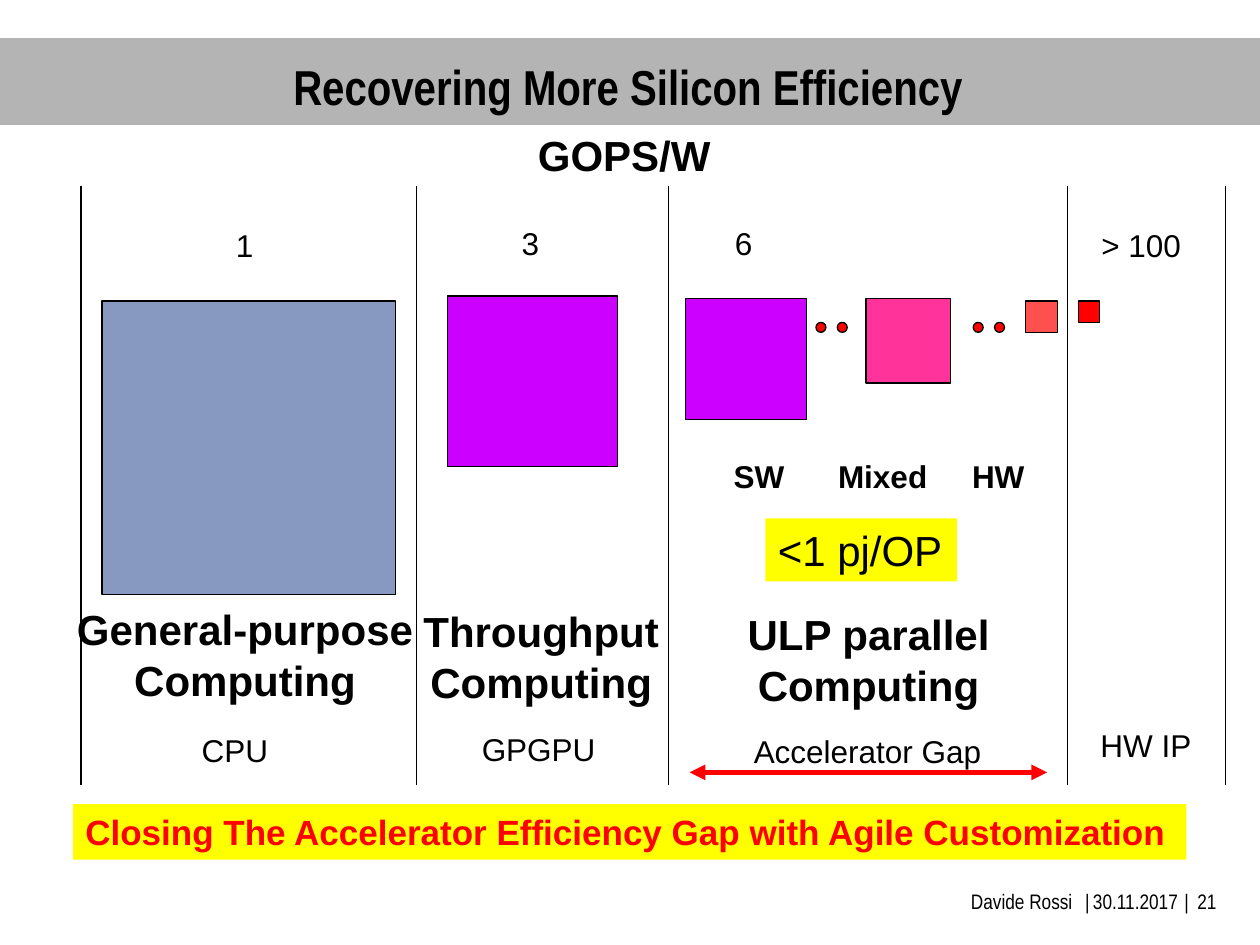
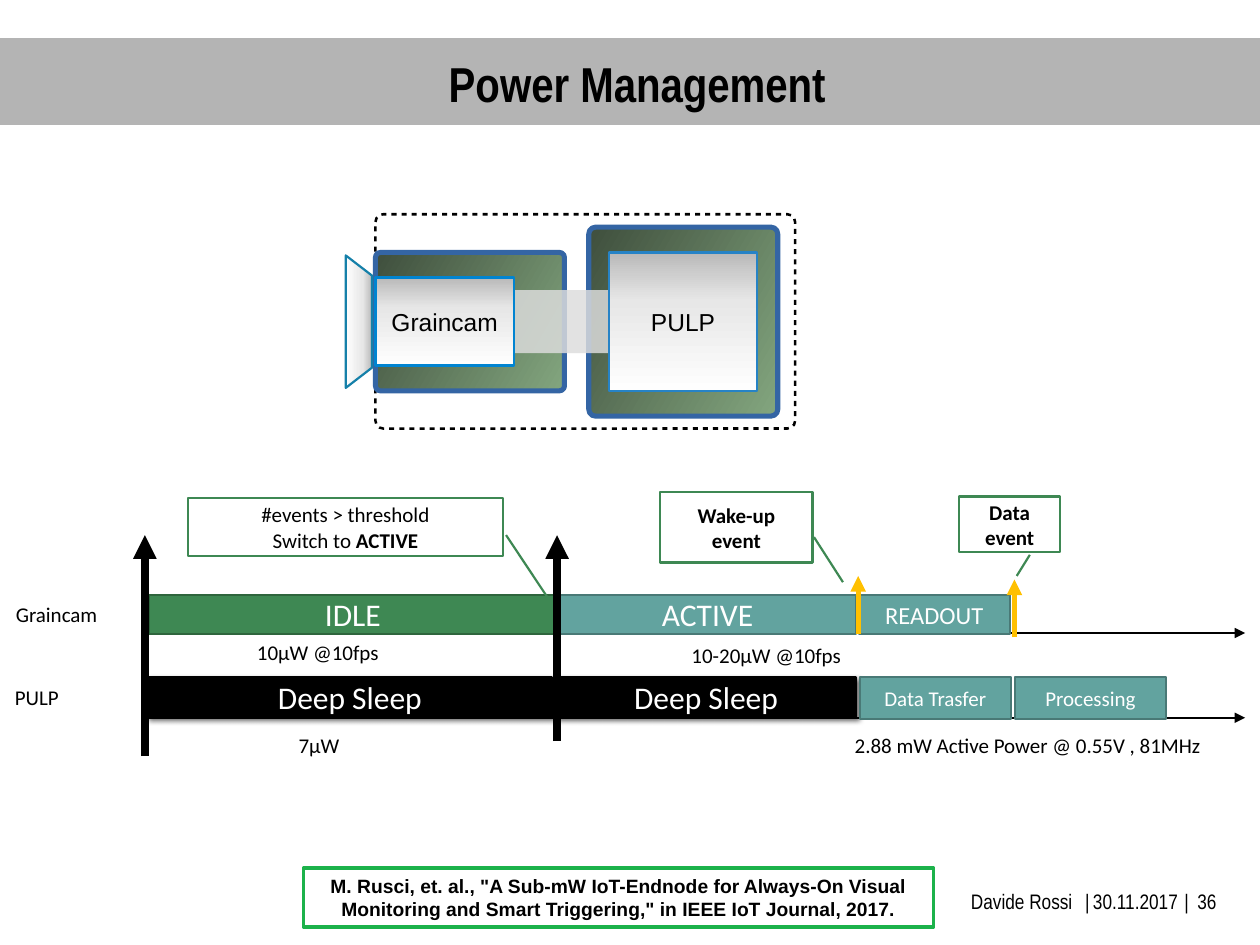
"""Build two slides on silicon efficiency and power management."""
from lxml.etree import SubElement
from pptx import Presentation
from pptx.dml.color import RGBColor
from pptx.enum.shapes import MSO_CONNECTOR, MSO_SHAPE
from pptx.enum.text import MSO_ANCHOR, PP_ALIGN
from pptx.oxml import parse_xml
from pptx.oxml.ns import nsdecls, qn
from pptx.util import Cm, Pt

BLACK, WHITE, RED, YELLOW = "000000", "FFFFFF", "FF0000", "FFFF00"
BAND, GREEN, TEAL, AMBER = "B4B4B4", "3E8853", "62A39F", "FFC000"
METAL = ([(0, "FEFEFE"), (65, "E7E7E7"), (100, "B9B9B9")], 270)
BOARD = ([(0, "3F4F3D"), (100, "83A67F")], 30)
LEFT, CENTER, RIGHT = PP_ALIGN.LEFT, PP_ALIGN.CENTER, PP_ALIGN.RIGHT
NARROW, SANS, BODY = "Arial Narrow", "Arial", "Calibri"

AUTHOR, DATE = "Davide Rossi", "30.11.2017"
EFFICIENCY = dict(title="Recovering More Silicon Efficiency", number="21",
                  title_spot=(0.87, 0.93, 23.6, 1.4))
POWER = dict(title="Power Management", number="36",
             title_spot=(0.91, 1.19, 23.9, 1.07))

DIVIDERS = (1.63, 8.4, 13.48, 21.52, 24.7)
SQUARES = [
    (2.06, 6.07, 5.92, "8799C1"), (9.02, 5.97, 3.43, "CC00FF"),
    (13.82, 6.02, 2.44, "CC00FF"), (17.46, 6.02, 1.7, "FF3399"),
    (20.68, 6.07, 0.64, "FF5050"), (21.74, 6.07, 0.43, RED),
]
DOT_PAIRS, DOT_STEP, DOT = (16.45, 19.62), 0.43, 0.2
PLAIN_LABELS = [
    (4.5, 4.42, 0.86, "1"), (10.26, 4.39, 0.86, "3"), (14.56, 4.39, 0.86, "6"),
    (21.95, 4.42, 2.11, "> 100"), (3.8, 14.61, 1.87, "CPU"),
    (9.44, 14.58, 2.84, "GPGPU"), (13.26, 14.63, 8.46, "Accelerator Gap"),
    (21.92, 14.5, 2.36, "HW IP"),
]
APPROACHES = [(14.53, 9.08, 1.54, "SW"), (16.63, 9.08, 2.33, "Mixed"),
              (19.33, 9.08, 1.59, "HW")]
HEADINGS = [
    (10.45, 2.49, 4.27, "GOPS/W"),
    (1.27, 12.04, 7.34, "General-purpose\nComputing"),
    (8.25, 12.08, 5.32, "Throughput\nComputing"),
    (14.78, 12.14, 5.46, "ULP parallel\nComputing"),
]
ENERGY = "<1 pj/OP"
MESSAGE = "Closing The Accelerator Efficiency Gap with Agile Customization"

TIME_AXES = (12.76, 14.47)
PHASE_STARTS = [(2.92, 15.24), (11.23, 14.94)]
EVENTS = [(17.3, 12.78, 11.61), (20.45, 12.85, 11.68)]
STATES = [
    ((3, 11.99, 8.23, 0.79), "IDLE", 18, GREEN, "2E653D"),
    ((2.98, 13.66, 8.15, 0.79), "Deep Sleep", 18, BLACK, BLACK),
    ((11.28, 11.99, 5.97, 0.79), "ACTIVE", 18, TEAL, "497976"),
    ((11.21, 13.66, 6.05, 0.79), "Deep Sleep", 18, BLACK, BLACK),
    ((17.31, 11.99, 3.05, 0.79), "READOUT", 14, TEAL, "497976"),
    ((17.33, 13.65, 3.05, 0.84), "Data Trasfer", 12, TEAL, "497976"),
    ((20.46, 13.65, 3.05, 0.84), "Processing", 12, TEAL, "497976"),
]
CALLOUTS = [
    ((3.79, 10.04, 6.35, 1.17), "#events > threshold\nSwitch to *ACTIVE*",
     (0.64, 1.01, 1.7, 1.14)),
    ((13.31, 9.92, 3.07, 1.42), "*Wake-up*\n*event*", (0.64, 1.01, 1.28, 1.2)),
    ((19.34, 10.01, 2.03, 1.12), "*Data*\n*event*", (1.05, 0.7, 1.43, 0.57)),
]
TIMELINE_LABELS = [
    (0.07, 11.99, 3.94, "Graincam"), (0.05, 13.66, 3.94, "PULP"),
    (4.93, 12.77, 4.24, "10μW @10fps"), (5.77, 14.63, 4.24, "7μW"),
    (13.69, 12.83, 4.9, "10-20μW @10fps"),
    (16.98, 14.63, 7.72, "2.88 mW Active Power @ 0.55V , 81MHz"),
]
BOARDS = [(7.57, 5.09, 3.81, 2.79), (11.87, 4.58, 3.81, 3.81)]
CHIPS = [
    ((7.57, 5.59, 2.79, 1.78), "Graincam", "0084D1", 1.45),
    ((12.27, 5.09, 3, 2.79), "PULP", "2683C6", 1.25),
]
CITATION = ('M. Rusci, et. al., "A Sub-mW IoT-Endnode for Always-On Visual '
            'Monitoring and Smart Triggering," in IEEE IoT Journal, 2017.')


def color(value):
    """Turn a hex string into a colour."""
    return RGBColor.from_string(value)


def write(box, text, size=12, font=BODY, ink=BLACK, bold=False, align=CENTER,
          anchor=MSO_ANCHOR.TOP, wrap=True, margins=(0.25, 0.13, 0.25, 0.13)):
    """Write lines of text, where asterisks switch bold on and off."""
    frame = box.text_frame
    frame.word_wrap, frame.vertical_anchor = wrap, anchor
    (frame.margin_left, frame.margin_top,
     frame.margin_right, frame.margin_bottom) = map(Cm, margins)
    for index, line in enumerate(text.split("\n")):
        para = frame.add_paragraph() if index else frame.paragraphs[0]
        para.alignment = align
        for turn, piece in enumerate(line.split("*")):
            if piece:
                span = para.add_run()
                span.text = piece
                span.font.size, span.font.name = Pt(size), font
                span.font.bold = bold or turn % 2 == 1
                span.font.color.rgb = color(ink)


def add_text(page, spot, text, **style):
    """Add a text box."""
    write(page.shapes.add_textbox(*map(Cm, spot)), text, **style)


def add_gradient(shape, stops, angle):
    """Give a shape a linear gradient."""
    shape.fill.background()
    marks = "".join(f'<a:gs pos="{at * 1000}"><a:srgbClr val="{tone}"/></a:gs>'
                    for at, tone in stops)
    gradient = parse_xml(
        f'<a:gradFill {nsdecls("a")} rotWithShape="1"><a:gsLst>{marks}</a:gsLst>'
        f'<a:lin ang="{angle * 60000}" scaled="0"/></a:gradFill>')
    properties = shape.element.spPr
    properties.replace(properties.find(qn("a:noFill")), gradient)


def add_shape(page, spot, fill=None, line=None, weight=0.75,
              kind=MSO_SHAPE.RECTANGLE, adjust=()):
    """Add a preset shape with a plain, gradient or empty fill."""
    shape = page.shapes.add_shape(kind, *map(Cm, spot))
    shape.shadow.inherit = False
    for index, value in enumerate(adjust):
        shape.adjustments[index] = value
    if isinstance(fill, tuple):
        add_gradient(shape, *fill)
    elif fill:
        shape.fill.solid()
        shape.fill.fore_color.rgb = color(fill)
    else:
        shape.fill.background()
    if line:
        shape.line.color.rgb = color(line)
        shape.line.width = Pt(weight)
    else:
        shape.line.fill.background()
    return shape


def add_line(page, start, end, ink=BLACK, weight=0.75, heads=()):
    """Add a straight line with optional arrowheads."""
    line = page.shapes.add_connector(MSO_CONNECTOR.STRAIGHT, *map(Cm, start + end))
    line.line.color.rgb = color(ink)
    line.line.width = Pt(weight)
    for head in heads:
        SubElement(line.element.spPr.find(qn("a:ln")), qn(f"a:{head}"),
                   type="triangle")
    SubElement(line.element.spPr, qn("a:effectLst"))


def add_drop_shadow(shape):
    """Give a shape a soft shadow."""
    shape.element.spPr.find(qn("a:effectLst")).append(parse_xml(
        f'<a:outerShdw {nsdecls("a")} blurRad="38100" dist="25400" dir="2700000">'
        '<a:srgbClr val="000000"><a:alpha val="60000"/></a:srgbClr></a:outerShdw>'))


def add_page(deck, title, title_spot, number):
    """Add a page with its band, title and footer."""
    page = deck.slides.add_slide(deck.slide_layouts[6])
    add_shape(page, (0, 0.77, 25.4, 1.75), BAND)
    add_text(page, title_spot, title, size=28, font=NARROW, bold=True,
             anchor=MSO_ANCHOR.BOTTOM, margins=(0.38, 0, 0.41, 0))
    footer = [(12.7, 8.92, AUTHOR, RIGHT), (21.77, 0.3, "|", CENTER),
              (21.89, 2, DATE, CENTER), (23.77, 0.3, "|", CENTER),
              (23.96, 0.74, number, CENTER)]
    for left, width, text, align in footer:
        add_text(page, (left, 17.52, width, 1.3), text, font=NARROW, align=align,
                 anchor=MSO_ANCHOR.MIDDLE, wrap=False, margins=(0, 0, 0, 0))
    return page


def build_efficiency(deck):
    """Compare the efficiency of the computing classes."""
    page = add_page(deck, **EFFICIENCY)
    for left in DIVIDERS:
        add_line(page, (left, 3.75), (left, 15.82))
    for left, top, side, fill in SQUARES:
        add_shape(page, (left, top, side, side), fill, BLACK)
    for pair in DOT_PAIRS:
        for left in (pair, pair + DOT_STEP):
            add_shape(page, (left, 6.5, DOT, DOT), RED, BLACK, kind=MSO_SHAPE.OVAL)
    add_line(page, (13.9, 15.57), (21.11, 15.57), RED, 3, ("headEnd", "tailEnd"))
    for left, top, width, text in APPROACHES:
        approach = add_shape(page, (left, top, width, 1.02), WHITE)
        write(approach, text, size=18, font=SANS, bold=True, wrap=False)
    for left, top, width, text in PLAIN_LABELS:
        add_text(page, (left, top, width, 1.02), text, size=18, font=SANS, wrap=False)
    for left, top, width, text in HEADINGS:
        height = 0.24 + 1.03 * len(text.split("\n"))
        add_text(page, (left, top, width, height), text, size=24, font=SANS,
                 bold=True, wrap=False)
    energy = add_shape(page, (15.43, 10.45, 3.86, 1.27), YELLOW)
    write(energy, ENERGY, size=24, font=SANS, align=LEFT, wrap=False)
    message = add_shape(page, (1.47, 16.21, 22.45, 1.12), YELLOW)
    write(message, MESSAGE, size=20, font=SANS, ink=RED, bold=True, align=LEFT,
          wrap=False)


def build_device(page):
    """Draw the camera and processor boards."""
    frame = add_shape(page, (7.57, 4.32, 8.46, 4.32), None, BLACK, 1.45,
                      MSO_SHAPE.ROUNDED_RECTANGLE, (0.036,))
    dashes = SubElement(frame.element.spPr.find(qn("a:ln")), qn("a:custDash"))
    SubElement(dashes, qn("a:ds"), d="200000", sp="200000")
    for spot in BOARDS:
        add_shape(page, spot, BOARD, "3465A4", 2.89,
                  MSO_SHAPE.ROUNDED_RECTANGLE, (0.036,))
    link = add_shape(page, (10.36, 5.85, 1.9, 1.27), "DDDDDD")
    tone = link.element.spPr.find(qn("a:solidFill")).find(qn("a:srgbClr"))
    SubElement(tone, qn("a:alpha"), val="83000")
    for spot, name, line, weight in CHIPS:
        write(add_shape(page, spot, METAL, line, weight), name, size=14, font=SANS,
              anchor=MSO_ANCHOR.MIDDLE, wrap=False)
    lens = add_shape(page, (5.9, 6.22, 2.67, 0.53), METAL, "1580A9", 1.25,
                     MSO_SHAPE.TRAPEZOID, (0.769,))
    lens.rotation = 90


def build_power(deck):
    """Show the power states over time."""
    page = add_page(deck, **POWER)
    for top in TIME_AXES:
        add_line(page, (2.92, top), (25.1, top), weight=1, heads=("tailEnd",))
    for spot, name, size, fill, line in STATES:
        state = add_shape(page, spot, fill, line, 1.25)
        write(state, name, size=size, ink=WHITE, anchor=MSO_ANCHOR.MIDDLE)
        if fill == BLACK:
            add_drop_shadow(state)
    for left, bottom in PHASE_STARTS:
        add_line(page, (left, bottom), (left, 10.79), weight=4.5, heads=("tailEnd",))
    for left, bottom, top in EVENTS:
        add_line(page, (left, bottom), (left, top), AMBER, 3, ("tailEnd",))
    for spot, text, pointer in CALLOUTS:
        callout = add_shape(page, spot, WHITE, GREEN, 1.25,
                            MSO_SHAPE.LINE_CALLOUT_1, pointer)
        write(callout, text, anchor=MSO_ANCHOR.MIDDLE)
    for left, top, width, text in TIMELINE_LABELS:
        add_text(page, (left, top, width, 0.76), text, align=LEFT)
    build_device(page)
    citation = add_shape(page, (6.12, 17.5, 12.7, 1.19), None, "1CB24B", 2)
    write(citation, CITATION, size=11, font=SANS, bold=True)


def main():
    """Build and save the deck."""
    deck = Presentation()
    deck.slide_width, deck.slide_height = Cm(25.4), Cm(19.05)
    build_efficiency(deck)
    build_power(deck)
    deck.save("out.pptx")


if __name__ == "__main__":
    main()
